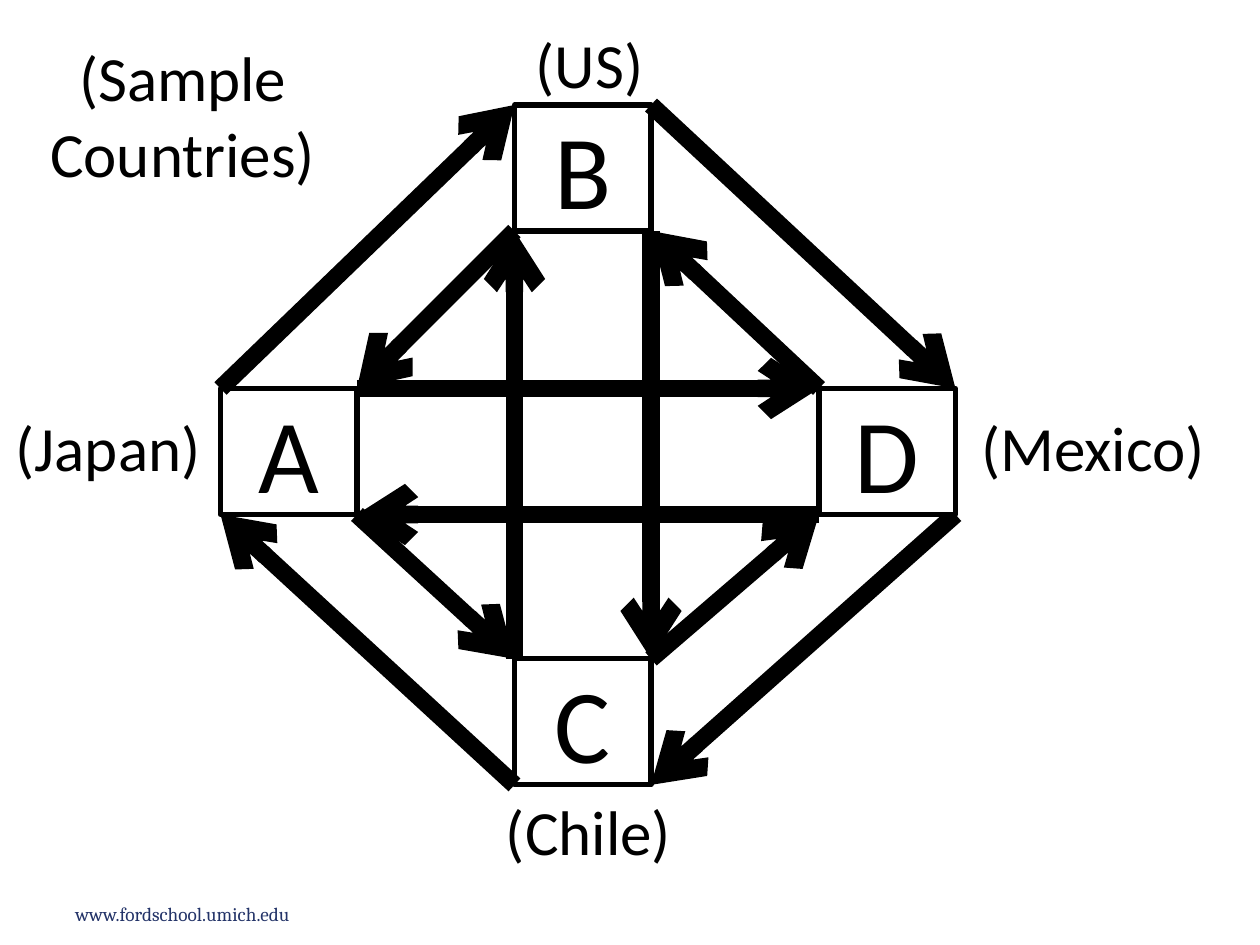
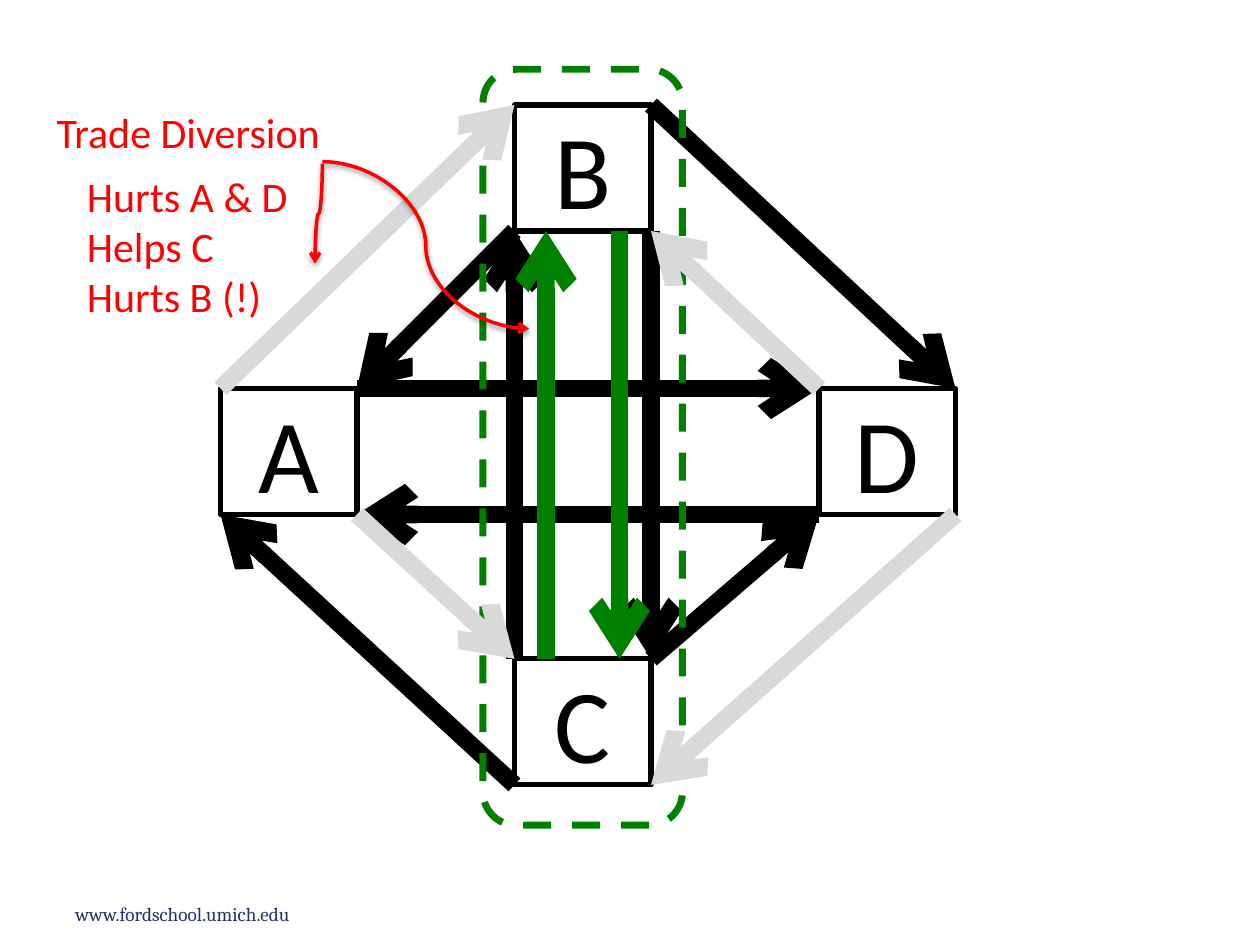
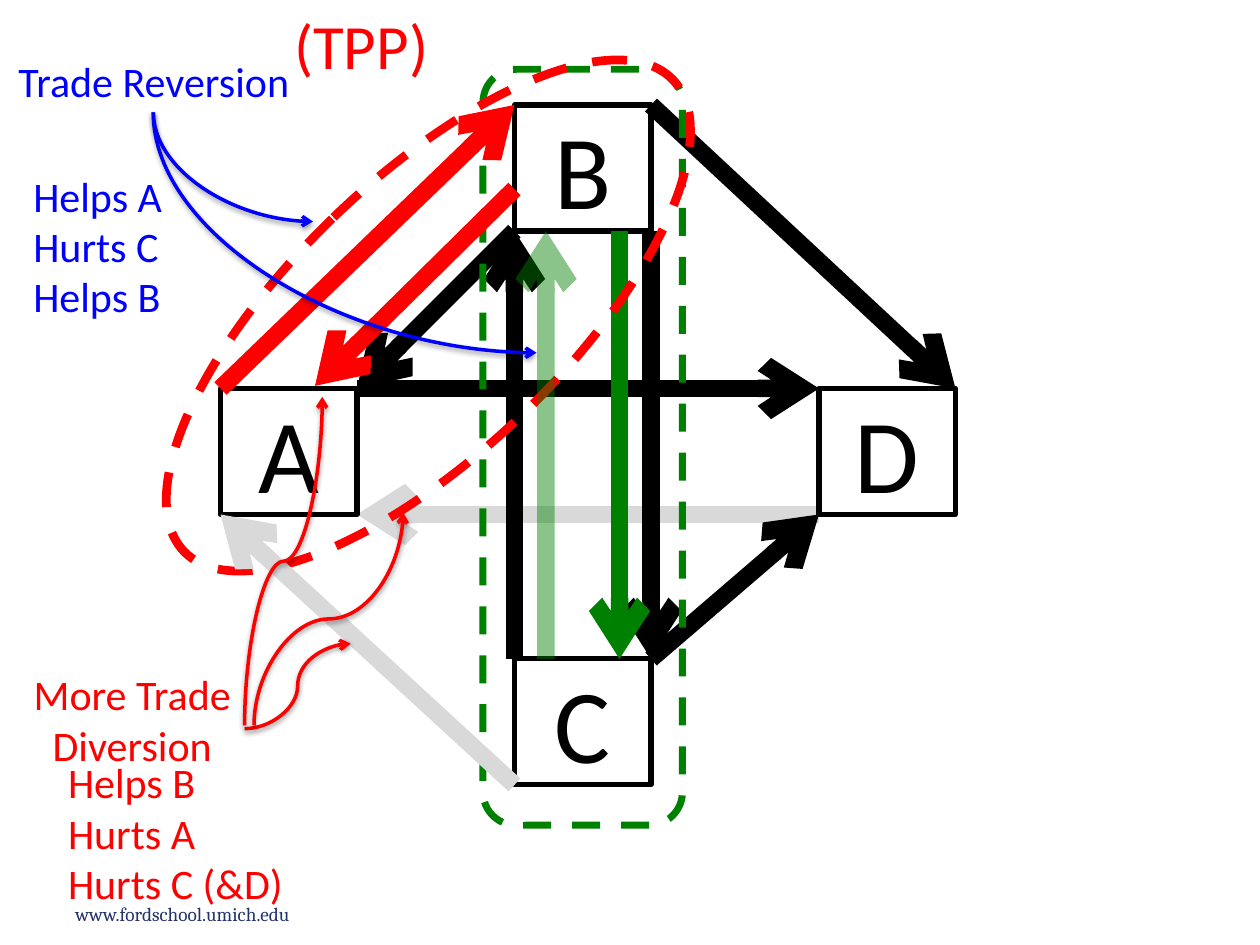
"""Build three slides on trade between four countries and its diversion."""
from dataclasses import dataclass

import pptx
import pptx.dml.color
import pptx.enum.dml
import pptx.enum.shapes
import pptx.enum.text
import pptx.oxml
import pptx.oxml.ns
import pptx.util

SHAPE = pptx.enum.shapes.MSO_SHAPE
CONNECTOR = pptx.enum.shapes.MSO_CONNECTOR
ALIGN = pptx.enum.text.PP_ALIGN
ANCHOR = pptx.enum.text.MSO_ANCHOR
DASH = pptx.enum.dml.MSO_LINE.DASH
qn = pptx.oxml.ns.qn


@dataclass(frozen=True)
class Theme:
    """Colours, fonts, type sizes and line widths."""
    ink: str = "000000"
    paper: str = "FFFFFF"
    faded: str = "D9D9D9"
    bloc: str = "008000"
    diversion: str = "FF0000"
    reversion: str = "0000FF"
    footer: str = "233368"
    font: str = "Calibri"
    footer_font: str = "Cambria"
    node_size: int = 60
    label_size: int = 36
    note_size: int = 24
    footer_size: int = 11
    node_line: int = 3
    trade_line: int = 10
    pointer_line: int = 2


T = Theme()
COLS, ROWS = 120, 90
NODE_W, NODE_H = 13, 12
NODES = {"A": (21, 37), "B": (49, 10), "C": (49, 62.75), "D": (78, 37)}
ROUTES = {
    "AB": ("tl", "tl"), "BA": ("bl", "tr"), "BC": ("br", "tr"), "CB": ("tl", "bl"),
    "CA": ("bl", "bl"), "AC": ("br", "tl"), "CD": ("tr", "bl"), "DB": ("tl", "br"),
    "BD": ("tr", "tr"), "DC": ("br", "br"), "AD": ("tr", "tl"), "DA": ("bl", "br"),
}
BLOC_TOP, BLOC_BOTTOM = NODES["B"][1] + NODE_H, NODES["C"][1]
EXPORT_COL, IMPORT_COL = 52, 59


def cells(*lengths):
    """Turn grid cells of a twelfth of an inch into slide lengths."""
    return [pptx.util.Inches(n * 10 / COLS) for n in lengths]


def rgb(color):
    """Return the colour for a hex string."""
    return pptx.dml.color.RGBColor.from_string(color)


def corner(name, place):
    """Return the grid point at a corner of a country's box."""
    x, y = NODES[name]
    return x + NODE_W * (place[1] == "r"), y + NODE_H * (place[0] == "b")


def xml(tag, parent, **attrs):
    """Append a DrawingML element with attributes to a parent."""
    el = parent.makeelement(qn(tag), {k: str(v) for k, v in attrs.items()})
    parent.append(el)
    return el


def write(tf, text, size, color, align=ALIGN.LEFT, font=T.font):
    """Fill a text frame with evenly formatted paragraphs."""
    tf.text = text
    for p in tf.paragraphs:
        p.alignment = align
        for r in p.runs:
            r.font.size, r.font.name = pptx.util.Pt(size), font
            r.font.color.rgb = rgb(color)


def add_text(s, box, text, size, color, align=ALIGN.LEFT, wrap=True, font=T.font):
    """Add a text box placed in grid cells."""
    tb = s.shapes.add_textbox(*cells(*box))
    tb.text_frame.word_wrap = wrap
    write(tb.text_frame, text, size, color, align, font)
    return tb


def add_label(s, box, text, color=T.ink):
    """Add a large centred label."""
    add_text(s, box, text, T.label_size, color, ALIGN.CENTER)


def add_outline(s, kind, box, color, width):
    """Add an unfilled shape with an outline and no shadow."""
    sp = s.shapes.add_shape(kind, *cells(*box))
    sp.shadow.inherit = False
    sp.fill.background()
    sp.line.color.rgb, sp.line.width = rgb(color), pptx.util.Pt(width)
    return sp


def add_nodes(s, names):
    """Add the lettered country boxes."""
    for name in names:
        sp = add_outline(s, SHAPE.RECTANGLE, (*NODES[name], NODE_W, NODE_H), T.ink, T.node_line)
        sp.fill.solid()
        sp.fill.fore_color.rgb = rgb(T.paper)
        sp.text_frame.vertical_anchor = ANCHOR.MIDDLE
        write(sp.text_frame, name, T.node_size, T.ink, ALIGN.CENTER)


def style_arrow(c, color, width):
    """Colour a connector, give it an arrowhead and return its effect list."""
    c.line.color.rgb, c.line.width = rgb(color), pptx.util.Pt(width)
    sp_pr = c.element.spPr
    xml("a:tailEnd", sp_pr.find(qn("a:ln")), type="arrow")
    return xml("a:effectLst", sp_pr)


def add_arrow(s, start, end, color, opacity=100):
    """Add a thick straight trade arrow."""
    c = s.shapes.add_connector(CONNECTOR.STRAIGHT, *cells(*start, *end))
    style_arrow(c, color, T.trade_line)
    if opacity < 100:
        clr = c.element.spPr.find(".//" + qn("a:srgbClr"))
        xml("a:alpha", clr, val=opacity * 1000)


def add_trade(s, routes, color=T.ink):
    """Add the trade arrows named by exporter and importer."""
    for route in routes.split():
        ends = [corner(n, place) for n, place in zip(route, ROUTES[route])]
        add_arrow(s, *ends, color)


def add_pointer(s, start, end, color, upright=True, preset="curvedConnector3"):
    """Add a thin curved arrow that leaves its start upright or sideways."""
    (x1, y1), (x2, y2) = start, end
    dx, dy = x2 - x1, y2 - y1
    if upright:
        mx, my, w, h = (x1 + x2) / 2, (y1 + y2) / 2, abs(dy), abs(dx)
        ends = (mx - w / 2, my - h / 2, mx + w / 2, my + h / 2)
    else:
        ends = (*start, *end)
    c = s.shapes.add_connector(CONNECTOR.CURVE, *cells(*ends))
    c.element.spPr.find(qn("a:prstGeom")).set("prst", preset)
    if upright:
        xfrm = c.element.spPr.find(qn("a:xfrm"))
        xfrm.set("rot", str((270 if dx * dy > 0 else 90) * 60000))
        xfrm.set("flipH", str(int(dx > 0)))
        xfrm.set("flipV", str(int(dy < 0)))
    effects = style_arrow(c, color, T.pointer_line)
    shadow = xml("a:outerShdw", effects, blurRad=pptx.util.Pt(3.1), dist=pptx.util.Pt(1.6),
                 dir=90 * 60000, rotWithShape=0)
    xml("a:alpha", xml("a:srgbClr", shadow, val=T.ink), val=38000)


def add_bloc(s):
    """Add the dashed frame around countries B and C."""
    sp = add_outline(s, SHAPE.ROUNDED_RECTANGLE, (46, 6.6, 19, 72), T.bloc, 4)
    sp.line.dash_style = DASH


def add_footer(layout, s):
    """Put the shared web address on the layout."""
    tb = add_text(s, (6, 85.2, 32.6, 3.5), "www.fordschool.umich.edu", T.footer_size,
                  T.footer, font=T.footer_font)
    tb.text_frame.vertical_anchor = ANCHOR.BOTTOM
    layout.shapes.element.append(tb.element)


def build_all_trade(s):
    """Show every trade flow with sample countries."""
    add_nodes(s, "BCA")
    add_trade(s, " ".join(ROUTES))
    add_nodes(s, "D")
    add_label(s, (41.5, 1.8, 29.3, 8.5), "(US)")
    add_label(s, (0, 38.3, 20.6, 8.5), "(Japan)")
    add_label(s, (42.5, 74.9, 27.1, 8.5), "(Chile)")
    add_label(s, (91.3, 38.3, 25.6, 8.5), "(Mexico)")
    add_label(s, (3.4, 3.1, 28, 15.7), "(Sample Countries)")


def build_diversion(s):
    """Show trade diverted by the bloc of B and C."""
    add_nodes(s, "BCA")
    add_trade(s, "BA BC CB CA CD BD AD DA")
    add_nodes(s, "D")
    add_bloc(s)
    add_arrow(s, (EXPORT_COL, BLOC_BOTTOM), (EXPORT_COL, BLOC_TOP), T.bloc)
    add_arrow(s, (IMPORT_COL, BLOC_TOP), (IMPORT_COL, BLOC_BOTTOM), T.bloc)
    add_trade(s, "AB DB DC AC", T.faded)
    add_text(s, (4.2, 9.6, 28.2, 6), "Trade Diversion", T.note_size, T.diversion, wrap=False)
    add_pointer(s, (30.7, 15.6), (30, 25.1), T.diversion)
    add_pointer(s, (30.7, 15.4), (50.4, 31.3), T.diversion, upright=False)
    add_text(s, (7.1, 15.6, 21.7, 15.7), "Hurts A & D\nHelps C\nHurts B (!)",
             T.note_size, T.diversion, wrap=False)


def build_reversion(s):
    """Show trade reverting once A and B join a second bloc."""
    add_trade(s, "DA", T.faded)
    add_nodes(s, "BCA")
    add_trade(s, "BA BC CB CD BD AD")
    add_nodes(s, "D")
    add_bloc(s)
    add_arrow(s, (IMPORT_COL, BLOC_TOP), (IMPORT_COL, BLOC_BOTTOM), T.bloc)
    second_bloc = add_outline(s, SHAPE.OVAL, (27.8, -2.3, 26, 64.7), T.diversion, 5)
    second_bloc.rotation = 46
    second_bloc.line.dash_style = DASH
    add_trade(s, "AB", T.diversion)
    add_arrow(s, (49, 18), (30, 36.75), T.diversion)
    add_trade(s, "CA", T.faded)
    add_arrow(s, (EXPORT_COL, BLOC_BOTTOM), (EXPORT_COL, BLOC_TOP), T.bloc, opacity=46)
    add_text(s, (0, 4.7, 29.3, 6), "Trade Reversion", T.note_size, T.reversion, ALIGN.CENTER)
    for end in ((29.8, 21.1), (51.1, 33.6)):
        add_pointer(s, (14.6, 10.7), end, T.reversion, preset="curvedConnector2")
    add_text(s, (-4.2, 63.1, 33.6, 10.9), "More Trade Diversion", T.note_size,
             T.diversion, ALIGN.CENTER)
    add_pointer(s, (23.3, 69.4), (33.4, 61.3), T.diversion, upright=False)
    add_pointer(s, (23.3, 69.1), (30.7, 37.8), T.diversion)
    add_pointer(s, (24.2, 69.1), (38.4, 48.8), T.diversion)
    add_text(s, (2, 15.6, 29.3, 15.7), "Helps A\nHurts C\nHelps B", T.note_size, T.reversion)
    add_text(s, (5.3, 71.5, 33.6, 15.7), "Helps B\nHurts A\nHurts C (&D)",
             T.note_size, T.diversion)
    add_label(s, (20.4, 0, 28, 8.5), "(TPP)", T.diversion)


def main():
    """Build and save the slides."""
    prs = pptx.Presentation()
    prs.slide_width, prs.slide_height = cells(COLS, ROWS)
    layout = prs.slide_layouts[6]
    builders = (build_all_trade, build_diversion, build_reversion)
    slides = [prs.slides.add_slide(layout) for _ in builders]
    add_footer(layout, slides[0])
    for s, build in zip(slides, builders):
        build(s)
    prs.save("out.pptx")


if __name__ == "__main__":
    main()
